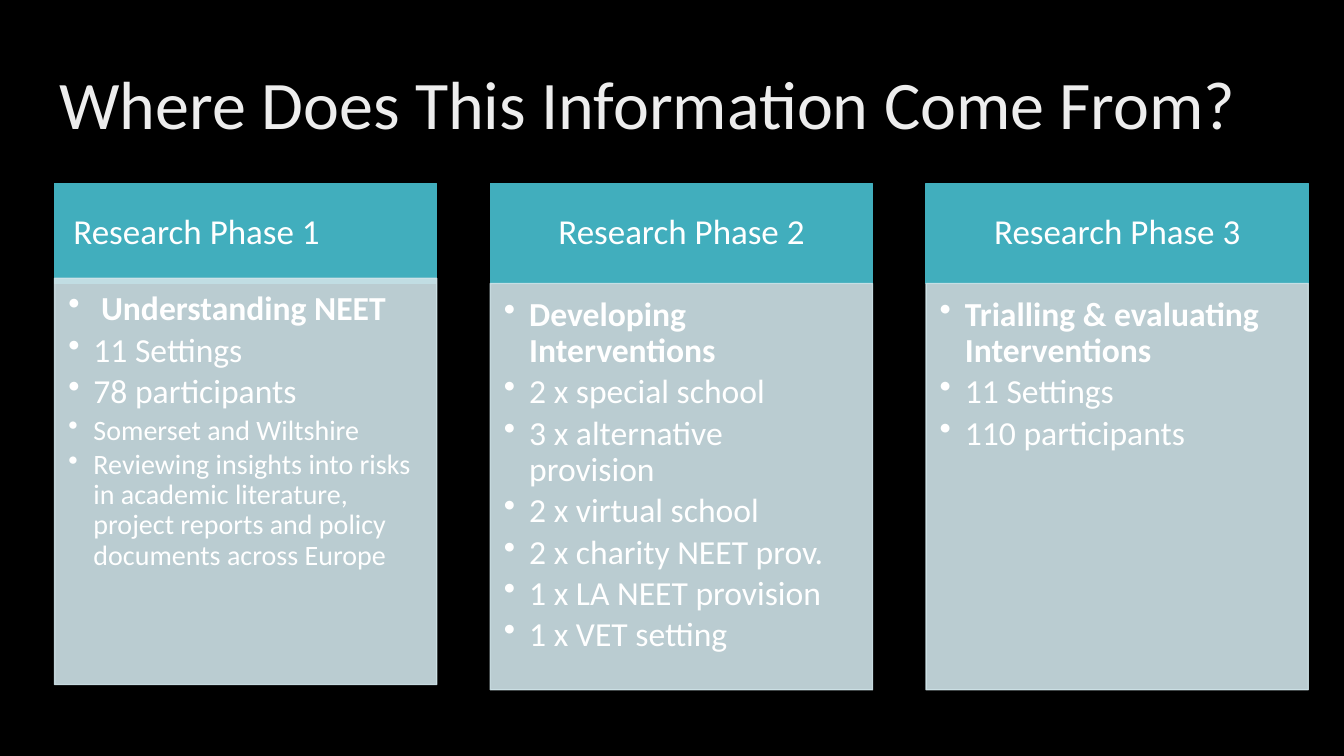
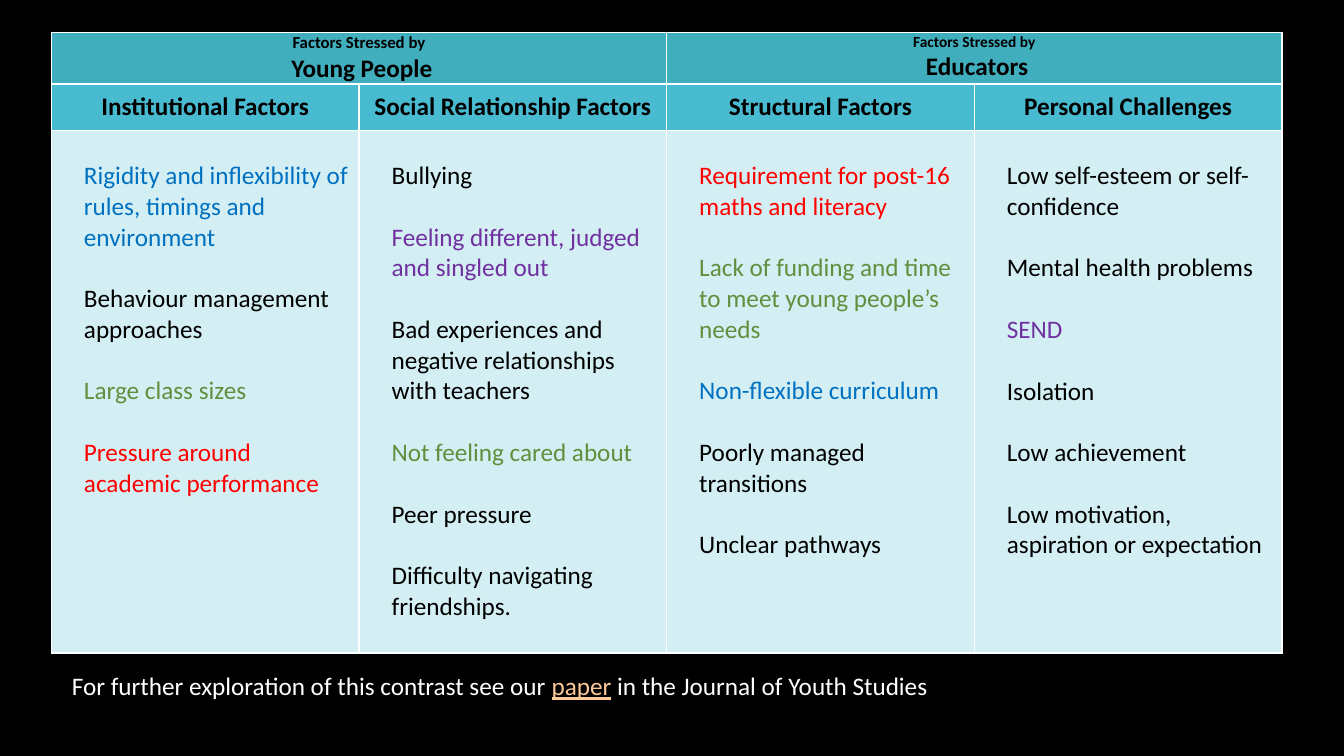
"""Build two slides on research phases and the factors behind NEET."""
from lxml import etree
from pptx import Presentation
from pptx import util as u
from pptx.dml.color import RGBColor
from pptx.enum import shapes, text
from pptx.oxml.ns import qn

PX = 9525
FONT = "Calibri"
BLACK = RGBColor(0x00, 0x00, 0x00)
WHITE = RGBColor(0xFF, 0xFF, 0xFF)
PALE = RGBColor(0xED, 0xED, 0xED)
TEAL = RGBColor(0x41, 0xAE, 0xBD)
MIST = RGBColor(0xCF, 0xE3, 0xE8)
SKY = RGBColor(0x49, 0xBB, 0xD1)
ICE = RGBColor(0xD4, 0xEF, 0xF4)
BLUE = RGBColor(0x00, 0x70, 0xC0)
GREEN = RGBColor(0x60, 0x8F, 0x3D)
RED = RGBColor(0xFF, 0x00, 0x00)
PLUM = RGBColor(0x70, 0x30, 0xA0)
PEACH = RGBColor(0xFB, 0xCA, 0x98)
LEFT, MID = text.PP_ALIGN.LEFT, text.PP_ALIGN.CENTER
SIDES = ("margin_left", "margin_top", "margin_right", "margin_bottom")


def say(para, words, size, tint, **look):
    run = para.add_run()
    run.text = words
    run.font.color.rgb = tint
    for key, val in {"name": FONT, "size": u.Pt(size), **look}.items():
        setattr(run.font, key, val)


def block(slide, spot, tint, pads, alpha=100):
    rect = slide.shapes.add_shape(shapes.MSO_SHAPE.RECTANGLE, *[n * PX for n in spot])
    rect.shadow.inherit = False
    rect.fill.solid()
    rect.fill.fore_color.rgb = tint
    rect.line.color.rgb = tint
    rect.line.width = u.Pt(1)
    if alpha < 100:
        for clr in rect._element.spPr.iter(qn("a:srgbClr")):
            etree.SubElement(clr, qn("a:alpha")).set("val", str(alpha * 1000))
    frame = rect.text_frame
    frame.word_wrap = True
    for side, pad in zip(SIDES, pads):
        setattr(frame, side, pad * PX)
    return frame


prs = Presentation()
prs.slide_width, prs.slide_height = 1280 * PX, 720 * PX
back = prs.slide_master.background.fill
back.solid()
back.fore_color.rgb = BLACK

slide = prs.slides.add_slide(prs.slide_layouts[5])
title = slide.shapes.title
title.left, title.top, title.width, title.height = [n * PX for n in (47, 33, 1199, 139)]
title.text_frame.vertical_anchor = text.MSO_ANCHOR.MIDDLE
para = title.text_frame.paragraphs[0]
para.alignment, para.line_spacing = LEFT, 0.9
say(para, "Where Does This Information Come From?", 48.6, PALE)

phases = [
    (LEFT, 265, [
        (" Understanding NEET", 24), ("11 Settings", 24), ("78 participants", 24),
        ("Somerset and Wiltshire", 20),
        ("Reviewing insights into risks in academic literature, project reports "
         "and policy documents across Europe", 20)]),
    (MID, 270, [
        ("Developing Interventions", 24), ("2 x special school", 24),
        ("3 x alternative provision", 24), ("2 x virtual school", 24),
        ("2 x charity NEET prov.", 24), ("1 x LA NEET provision", 24),
        ("1 x VET setting", 24)]),
    (MID, 270, [
        ("Trialling & evaluating Interventions", 24), ("11 Settings", 24),
        ("110 participants", 24)]),
]
for col, (align, top, points) in enumerate(phases):
    left = 52 + 415 * col
    head = block(slide, (left, 175, 364, 95), TEAL, (18, 11, 18, 11))
    head.vertical_anchor = text.MSO_ANCHOR.MIDDLE
    para = head.paragraphs[0]
    para.alignment, para.line_spacing = align, 0.9
    say(para, f"Research Phase {col + 1}", 25, WHITE)

    body = block(slide, (left, top, 364, 387), MIST, (13, 13, 18, 20), 90)
    body.vertical_anchor = text.MSO_ANCHOR.TOP
    for row, (words, size) in enumerate(points):
        para = body.add_paragraph() if row else body.paragraphs[0]
        props = para._p.get_or_add_pPr()
        props.set("marL", str(24 * PX))
        props.set("indent", str(-24 * PX))
        etree.SubElement(props, qn("a:buChar")).set("char", "•")
        para.alignment, para.line_spacing = LEFT, 0.9
        para.space_after = u.Pt(0.15 * size)
        say(para, words, size, WHITE, bold=row == 0)

slide = prs.slides.add_slide(prs.slide_layouts[6])
grid = slide.shapes.add_table(3, 4, 49 * PX, 31 * PX, 1172 * PX, 591 * PX).table
for row, high in zip(grid.rows, (49, 44, 498)):
    row.height = high * PX
for row, tint in enumerate((TEAL, SKY, ICE)):
    for col in range(4):
        cell = grid.cell(row, col)
        cell.fill.solid()
        cell.fill.fore_color.rgb = tint
        for side, pad in zip(SIDES, (31, 29, 7, 0) if row == 2 else (7, 0, 7, 0)):
            setattr(cell, side, pad * PX)

for col, who, size in ((0, " Young People", 12), (2, " Educators", 11)):
    cell = grid.cell(0, col)
    cell.merge(grid.cell(0, col + 1))
    frame = cell.text_frame
    lines = [("Factors Stressed by", size), (who, 18)]
    for row, (words, size) in enumerate(lines):
        para = frame.add_paragraph() if row else frame.paragraphs[0]
        para.alignment = MID
        say(para, words, size, BLACK, bold=True)

factors = {
    "Institutional Factors": [
        ("Rigidity and inflexibility of rules, timings and environment", BLUE),
        ("Behaviour management approaches", BLACK),
        ("Large class sizes", GREEN),
        ("Pressure around academic performance", RED)],
    "Social Relationship Factors": [
        ("Bullying", BLACK),
        ("Feeling different, judged and singled out", PLUM),
        ("Bad experiences and negative relationships with teachers", BLACK),
        ("Not feeling cared about", GREEN),
        ("Peer pressure", BLACK),
        ("Difficulty navigating friendships.", BLACK)],
    "Structural Factors": [
        ("Requirement for post-16 maths and literacy", RED),
        ("Lack of funding and time to meet young people’s needs", GREEN),
        ("Non-flexible curriculum", BLUE),
        ("Poorly managed transitions", BLACK),
        ("Unclear pathways", BLACK)],
    "Personal Challenges": [
        ("Low self-esteem or self-confidence", BLACK),
        ("Mental health problems", BLACK),
        ("SEND", PLUM),
        ("Isolation", BLACK),
        ("Low achievement", BLACK),
        ("Low motivation, aspiration or expectation", BLACK)],
}
for col, (name, points) in enumerate(factors.items()):
    cell = grid.cell(1, col)
    cell.vertical_anchor = text.MSO_ANCHOR.MIDDLE
    para = cell.text_frame.paragraphs[0]
    para.alignment = MID
    say(para, name, 18, BLACK, bold=True)
    frame = grid.cell(2, col).text_frame
    for row, (words, tint) in enumerate(points):
        para = frame.add_paragraph() if row else frame.paragraphs[0]
        if row:
            para.space_before = u.Pt(22)
        say(para, words, 18, tint, bold=False)

note = slide.shapes.add_textbox(*[n * PX for n in (59, 634, 1166, 38)]).text_frame
note.word_wrap = True
para = note.paragraphs[0]
say(para, "For further exploration of this contrast see our ", 18, WHITE)
say(para, "paper", 18, PEACH, underline=True)
say(para, " in the Journal of Youth Studies", 18, WHITE)

prs.save("out.pptx")
